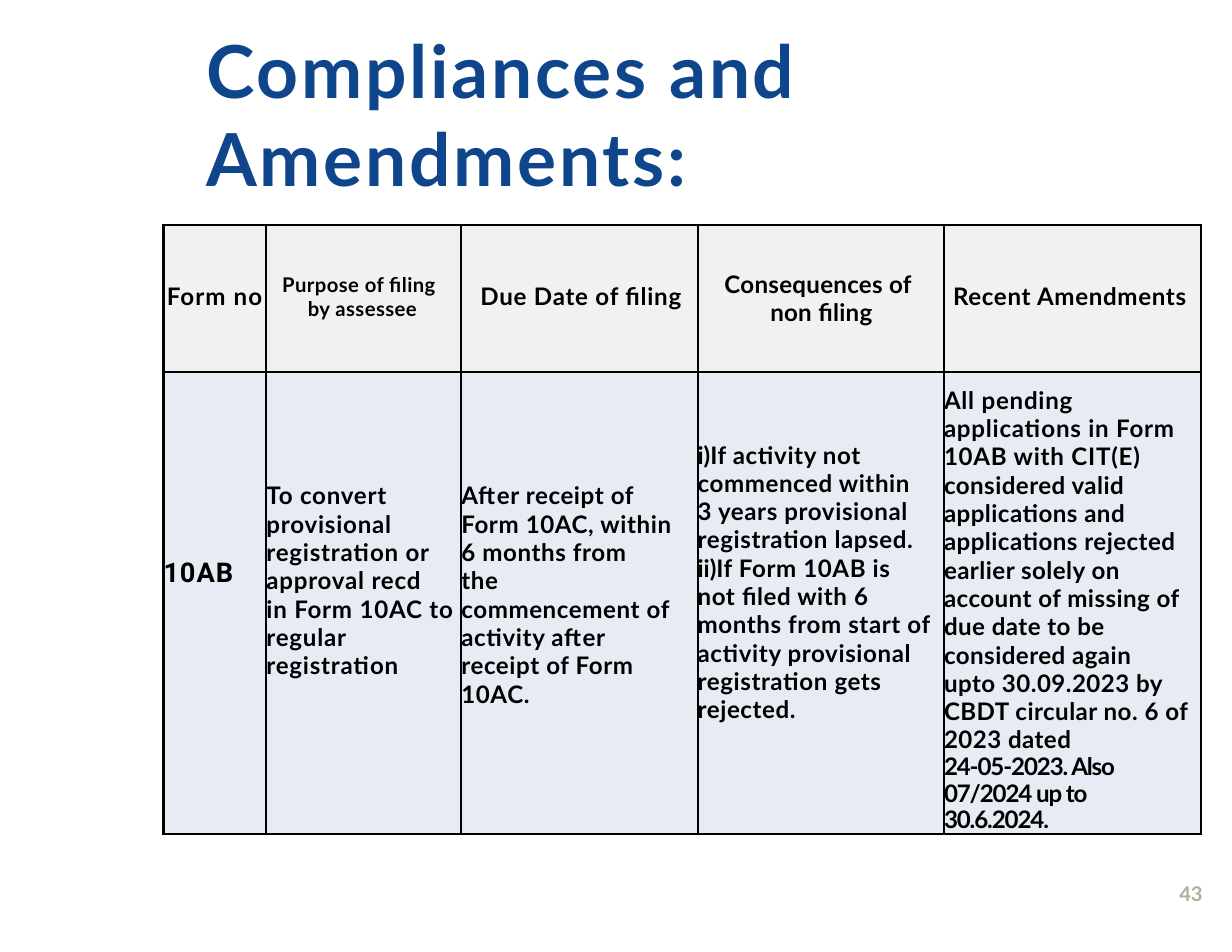
from dataclasses import dataclass

from lxml import etree
from pptx import Presentation
from pptx import util as u
from pptx.dml import color
from pptx.enum import text
from pptx.oxml import ns

WIDE, HIGH = 11, 8.5
BLACK, BLUE, GREY = "000000", "0F468B", "B0AF9E"
HEAD, BODY = "F1F1F1", "E7ECF4"
COLS = (8.36, 15.82, 19.18, 20, 20.82)
ROWS = (15.41, 48.47)


@dataclass
class Para:
    words: str
    size: float = 15.5
    gap: float = 0.4
    lead: float | None = None
    left: float = 0
    first: float = 0
    face: str = "Lato"
    tint: str = BLACK
    num: bool = False


@dataclass
class Cell:
    top: float
    paras: list[Para]


HEADS = [
    Cell(6, [Para("Form no", gap=0.7, left=0.27)]),
    Cell(4.94, [Para("Purpose of ﬁling\vby assessee", 13, 0.3, left=3.36, first=-2.09)]),
    Cell(6, [Para("Due Date of ﬁling", left=1.55, gap=0.5)]),
    Cell(4.7, [Para("Consequences of\vnon ﬁling", gap=0.2, lead=18.1, left=5.9, first=-3.72)]),
    Cell(6, [Para("Recent Amendments", left=0.73, gap=0.45)]),
]

BODIES = [
    Cell(19.53, [Para("10AB", 17.5, face="Roboto", gap=0.6)]),
    Cell(11.53, [Para(
        "To convert\vprovisional\vregistration or\vapproval recd\v"
        "in Form 10AC to\vregular\vregistration", gap=0.5, lead=18.2)]),
    Cell(11.53, [Para(
        "After receipt of\vForm 10AC, within\v6 months from\vthe\v"
        "commencement of\vactivity after\vreceipt of Form\v10AC.", lead=18.2)]),
    Cell(7.29, [
        Para("If activity not\vcommenced within\v3 years provisional\v"
             "registration lapsed.", lead=18.1, num=True),
        Para("If Form 10AB is\vnot ﬁled with 6\vmonths from start of\v"
             "activity provisional\vregistration gets\vrejected.", lead=18.2, num=True)]),
    Cell(1.53, [
        Para("All pending\vapplications in Form\v10AB with CIT(E)", gap=0.5, lead=18.1),
        Para("considered valid\vapplications and\vapplications rejected\v"
             "earlier solely on\vaccount of missing of\vdue date to be\v"
             "considered again\vupto 30.09.2023 by\vCBDT circular no. 6 of\v2023 dated",
             gap=0.3, lead=18.2),
        Para("24-05-2023. Also\v07/2024 up to\v30.6.2024.", gap=-0.7, lead=17.1)]),
]


def across(share: float) -> int:
    return u.Inches(WIDE * share / 100)


def down(share: float) -> int:
    return u.Inches(HIGH * share / 100)


def rgb(code: str) -> color.RGBColor:
    return color.RGBColor.from_string(code)


def write(frame, paras: list[Para]) -> None:
    for i, item in enumerate(paras):
        para = frame.add_paragraph() if i else frame.paragraphs[0]
        para.text = item.words
        para.alignment = text.PP_ALIGN.LEFT
        props = para._p.get_or_add_pPr()
        props.set("marL", str(across(item.left)))
        props.set("indent", str(across(item.first)))
        if item.num:
            mark = etree.SubElement(props, ns.qn("a:buAutoNum"))
            mark.set("type", "romanLcParenR")
        if item.lead:
            para.line_spacing = u.Pt(item.lead)
        for run in para.runs:
            font = run.font
            font.name, font.size, font.bold = item.face, u.Pt(item.size), True
            font.color.rgb = rgb(item.tint)
            run._r.get_or_add_rPr().set("spc", str(round(item.gap * 100)))


def label(slide, box: tuple[float, float, float, float], para: Para) -> None:
    left, top, wide, high = box
    shape = slide.shapes.add_textbox(across(left), down(top), across(wide), down(high))
    frame = shape.text_frame
    frame.word_wrap = True
    frame.margin_left = frame.margin_right = 0
    frame.margin_top = frame.margin_bottom = 0
    write(frame, [para])


def edge(cell) -> None:
    props = cell._tc.get_or_add_tcPr()
    for side in "LRTB":
        line = etree.SubElement(props, ns.qn(f"a:ln{side}"), w=str(u.Pt(1.5)))
        fill = etree.SubElement(line, ns.qn("a:solidFill"))
        etree.SubElement(fill, ns.qn("a:srgbClr"), val=BLACK)


def grid(slide) -> None:
    frame = slide.shapes.add_table(
        len(ROWS), len(COLS), across(13.27), down(23.65),
        across(sum(COLS)), down(sum(ROWS)))
    table = frame.table
    for col, wide in zip(table.columns, COLS):
        col.width = across(wide)
    for row, high, cells, tint in zip(table.rows, ROWS, (HEADS, BODIES), (HEAD, BODY)):
        row.height = down(high)
        for cell, item in zip(row.cells, cells):
            cell.margin_left = cell.margin_right = cell.margin_bottom = 0
            cell.margin_top = down(item.top)
            cell.vertical_anchor = text.MSO_ANCHOR.TOP
            edge(cell)
            cell.fill.solid()
            cell.fill.fore_color.rgb = rgb(tint)
            write(cell.text_frame, item.paras)


def main() -> None:
    deck = Presentation()
    deck.slide_width, deck.slide_height = u.Inches(WIDE), u.Inches(HIGH)
    slide = deck.slides.add_slide(deck.slide_layouts[6])
    label(slide, (4.73, 2.7, 90.55, 18.47),
          Para("Compliances and\vAmendments:", 47, 1.75, left=12, tint=BLUE))
    grid(slide)
    label(slide, (95.36, 92.6, 2.64, 2.82), Para("43", 13, -0.1, left=0.36, tint=GREY))
    deck.save("out.pptx")


if __name__ == "__main__":
    main()
